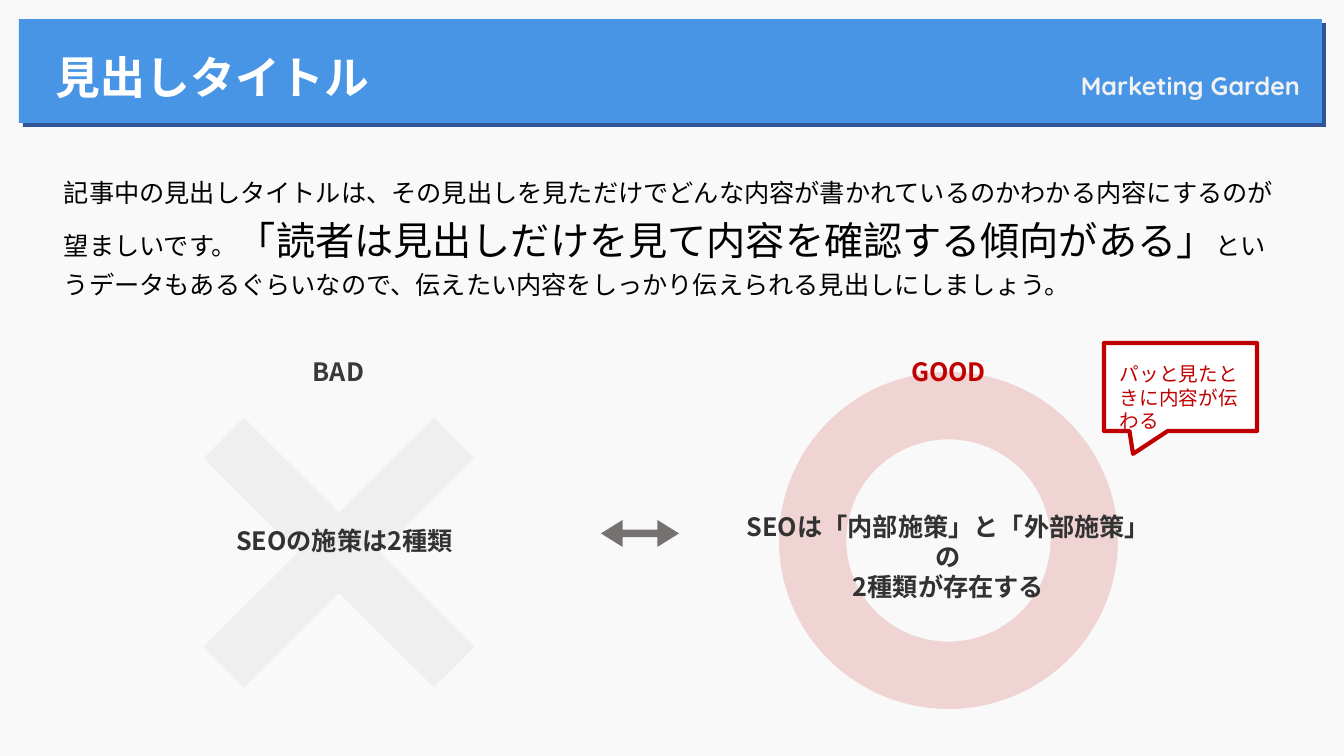
from dataclasses import dataclass
from lxml import etree
from pptx import Presentation
from pptx.dml.color import RGBColor
from pptx.enum.shapes import MSO_SHAPE
from pptx.enum.text import MSO_ANCHOR, MSO_AUTO_SIZE, PP_ALIGN
from pptx.oxml.ns import qn
from pptx.util import Pt

RECT, DONUT, CROSS = MSO_SHAPE.RECTANGLE, MSO_SHAPE.DONUT, MSO_SHAPE.MATH_MULTIPLY
ARROW, CALLOUT = MSO_SHAPE.LEFT_RIGHT_ARROW, MSO_SHAPE.RECTANGULAR_CALLOUT
LEFT, CENTER, RIGHT = PP_ALIGN.LEFT, PP_ALIGN.CENTER, PP_ALIGN.RIGHT
TOP, BOTTOM = MSO_ANCHOR.TOP, MSO_ANCHOR.BOTTOM
GROW, FIXED = MSO_AUTO_SIZE.SHAPE_TO_FIT_TEXT, MSO_AUTO_SIZE.NONE


@dataclass(frozen=True)
class Theme:
    back: str = "F9F9F9"
    blue: str = "4795E4"
    navy: str = "2F5597"
    white: str = "FFFFFF"
    pale: str = "F2F2F2"
    black: str = "000000"
    ink: str = "323232"
    dark: str = "3B3838"
    gray: str = "767171"
    mist: str = "EDEDED"
    red: str = "C00000"
    head: int = 32
    big: int = 28
    body: int = 18
    note: int = 14
    font: str = "Noto Sans CJK JP"
    title: str = "Arial"
    brand: str = "Quicksand"


T = Theme()
WIDE, HIGH = 1344, 756
PX = 12192000 / WIDE

TITLE = "見出しタイトル"
BRAND = "Marketing Garden"
BODY = [
    ("記事中の見出しタイトルは、その見出しを見ただけでどんな内容が書かれているのかわかる内容にするのが望ましいです。", T.body),
    ("「読者は見出しだけを見て内容を確認する傾向がある」", T.big),
    ("というデータもあるぐらいなので、伝えたい内容をしっかり伝えられる見出しにしましょう。", T.body),
]
BAD = ["SEOの施策は2種類"]
GOOD = ["SEOは「内部施策」と「外部施策」の", "2種類が存在する"]
NOTE = "パッと見たときに内容が伝わる"

# label, label colour, label left, lines, lines box
SIDES = [
    ("BAD", T.dark, 124, BAD, (130, 520, 429, 40)),
    ("GOOD", T.red, 734, GOOD, (734, 506, 429, 72)),
]

# kind, box, fill, opacity in percent, adjustments, outline
MARKS = [
    (DONUT, (779, 372, 339, 337), T.red, 15, (0.2,), None),
    (CROSS, (117, 332, 444, 441), T.mist, 76, (0.13,), None),
    (ARROW, (601, 520, 78, 27), T.gray, 100, (0.28, 0.8), None),
    (CALLOUT, (1104, 343, 153, 88), T.white, 100, (-0.31, 0.76), T.red),
]


def emu(box):
    return [round(n * PX) for n in box]


def shape(kind, box, color, alpha=100, adjust=(), line=None):
    mark = slide.shapes.add_shape(kind, *emu(box))
    mark.shadow.inherit = False
    for i, value in enumerate(adjust):
        mark.adjustments[i] = value
    mark.fill.solid()
    mark.fill.fore_color.rgb = RGBColor.from_string(color)
    if alpha < 100:
        tint = mark.fill._xPr.find(".//" + qn("a:srgbClr"))
        etree.SubElement(tint, qn("a:alpha")).set("val", str(alpha * 1000))
    if line:
        mark.line.color.rgb = RGBColor.from_string(line)
        mark.line.width = Pt(3)
    else:
        mark.line.fill.background()


def text(paras, box, color, size=T.body, font=T.font, bold=False,
         align=LEFT, anchor=TOP, space=None, fit=GROW):
    """Each paragraph is a string or a list of (string, size) runs."""
    frame = slide.shapes.add_textbox(*emu(box)).text_frame
    frame.word_wrap = True
    frame.auto_size = fit
    frame.vertical_anchor = anchor
    for i, runs in enumerate(paras):
        para = frame.add_paragraph() if i else frame.paragraphs[0]
        para.alignment = align
        if space:
            para.line_spacing = space
        for words, points in [(runs, size)] if isinstance(runs, str) else runs:
            run = para.add_run()
            run.text = words
            run.font.name = font
            run.font.size = Pt(points)
            run.font.bold = bold
            run.font.color.rgb = RGBColor.from_string(color)
            east = etree.SubElement(run.font._element, qn("a:ea"))
            east.set("typeface", T.font)


deck = Presentation()
deck.slide_width, deck.slide_height = emu((WIDE, HIGH))
slide = deck.slides.add_slide(deck.slide_layouts[6])
slide.background.fill.solid()
slide.background.fill.fore_color.rgb = RGBColor.from_string(T.back)

for edge, color in ((23, T.navy), (19, T.blue)):
    shape(RECT, (edge, edge, 1303, 104), color)
text([BRAND], (793, 35, 517, 71), T.pale, font=T.brand, bold=True,
     align=RIGHT, anchor=BOTTOM, space=0.9, fit=FIXED)
text([TITLE], (46, 45, 601, 65), T.white, T.head, T.title, bold=True)
text([BODY], (54, 166, 1232, 136), T.black, space=1.2)

for mark in MARKS:
    shape(*mark)
for label, color, left, lines, box in SIDES:
    text(lines, box, T.ink, bold=True, align=CENTER)
    text([label], (left, 351, 429, 40), color, bold=True, align=CENTER)
text([NOTE], (1110, 357, 148, 57), T.red, T.note)

deck.save("out.pptx")
